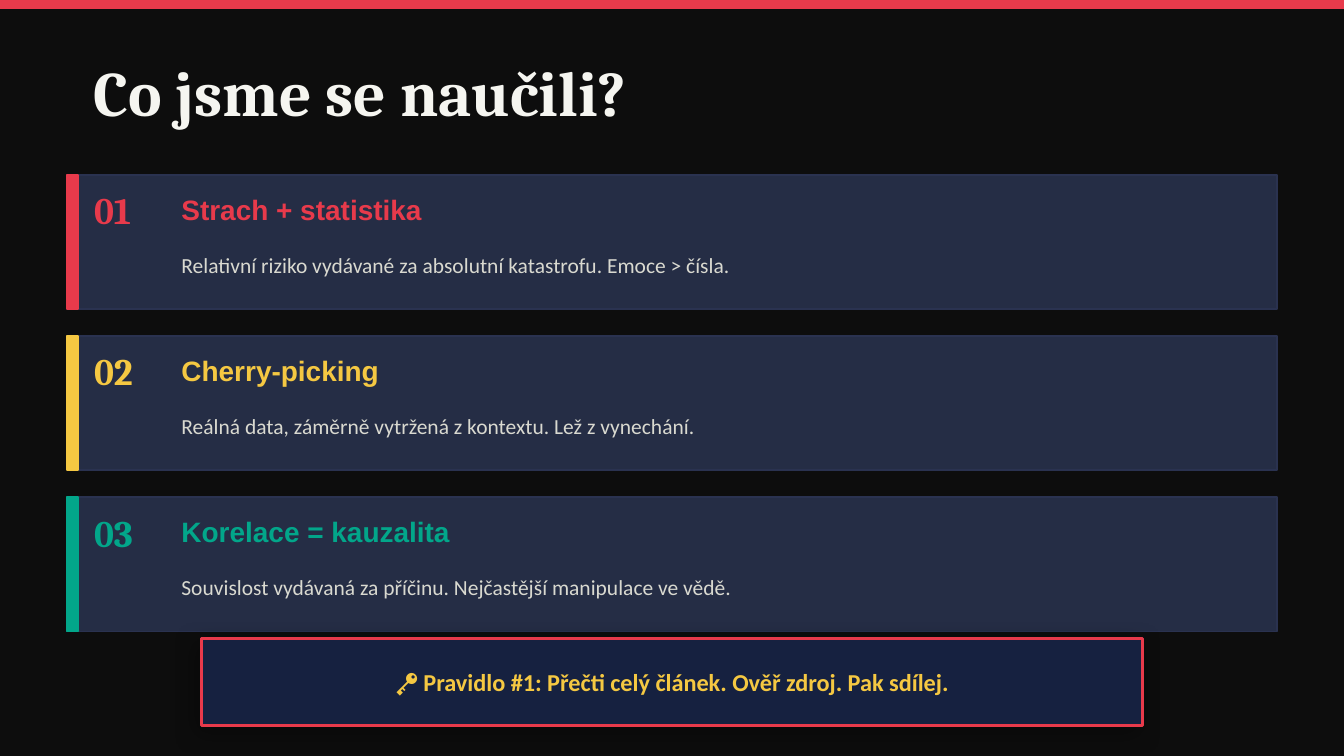
import pptx
import pptx.dml.color
import pptx.enum.shapes
import pptx.enum.text
import pptx.oxml
import pptx.oxml.ns
import pptx.util

Inches = pptx.util.Inches
Pt = pptx.util.Pt
Align = pptx.enum.text.PP_ALIGN


class Theme:
    back, card, edge, navy = "0D0D0D", "252D45", "2A3250", "162140"
    red, gold, green = "E83A4B", "F5C842", "02A68A"
    white, grey = "F5F5F0", "D9D9D0"
    serif, sans, body = "Cambria", "Arial", "Calibri"
    title, number, head, rule, note = 34, 20, 15, 13, 11.5


def add_box(left, top, width, height, fill, line, weight=1):
    box = slide.shapes.add_shape(
        pptx.enum.shapes.MSO_SHAPE.RECTANGLE,
        Inches(left), Inches(top), Inches(width), Inches(height))
    box.shadow.inherit = False
    box.fill.solid()
    box.fill.fore_color.rgb = pptx.dml.color.RGBColor.from_string(fill)
    box.line.color.rgb = pptx.dml.color.RGBColor.from_string(line)
    box.line.width = Pt(weight)
    return box


def add_text(left, top, width, height, text, size, font, color,
             bold=True, align=Align.LEFT, inset=(0, 0)):
    box = slide.shapes.add_textbox(
        Inches(left), Inches(top), Inches(width), Inches(height))
    frame = box.text_frame
    frame.word_wrap = True
    frame.vertical_anchor = pptx.enum.text.MSO_ANCHOR.MIDDLE
    frame.margin_left = frame.margin_right = Inches(inset[0])
    frame.margin_top = frame.margin_bottom = Inches(inset[1])
    para = frame.paragraphs[0]
    para.alignment = align
    run = para.add_run()
    run.text = text
    run.font.size = Pt(size)
    run.font.name = font
    run.font.bold = bold
    run.font.color.rgb = pptx.dml.color.RGBColor.from_string(color)


deck = pptx.Presentation()
deck.slide_width = Inches(10)
deck.slide_height = Inches(5.625)
slide = deck.slides.add_slide(deck.slide_layouts[6])
slide.background.fill.solid()
slide.background.fill.fore_color.rgb = pptx.dml.color.RGBColor.from_string(Theme.back)

add_box(0, 0, 10, 0.06, Theme.red, Theme.red)
add_text(0.6, 0.3, 8.8, 0.75, "Co jsme se naučili?",
         Theme.title, Theme.serif, Theme.white, inset=(0.1, 0.05))

lessons = [
    ("Strach + statistika", Theme.red,
     "Relativní riziko vydávané za absolutní katastrofu. Emoce > čísla."),
    ("Cherry-picking", Theme.gold,
     "Reálná data, záměrně vytržená z kontextu. Lež z vynechání."),
    ("Korelace = kauzalita", Theme.green,
     "Souvislost vydávaná za příčinu. Nejčastější manipulace ve vědě."),
]
for index, (head, color, note) in enumerate(lessons):
    top = 1.3 + 1.2 * index
    add_box(0.5, top, 9, 1, Theme.card, Theme.edge)
    add_box(0.5, top, 0.08, 1, color, color)
    add_text(0.7, top + 0.05, 0.55, 0.42, f"{index + 1:02}",
             Theme.number, Theme.serif, color)
    add_text(1.35, top + 0.08, 3.8, 0.35, head, Theme.head, Theme.sans, color)
    add_text(1.35, top + 0.48, 7.9, 0.38, note,
             Theme.note, Theme.body, Theme.grey, bold=False)

panel = add_box(1.5, 4.75, 7, 0.65, Theme.navy, Theme.red, 1.5)
effects = panel._element.spPr.find(pptx.oxml.ns.qn("a:effectLst"))
effects.append(pptx.oxml.parse_xml(
    f'<a:outerShdw {pptx.oxml.ns.nsdecls("a")} blurRad="{Pt(12)}" '
    f'dist="{Pt(4)}" dir="{135 * 60000}" algn="bl" rotWithShape="0">'
    '<a:srgbClr val="000000"><a:alpha val="35000"/></a:srgbClr></a:outerShdw>'))
add_text(1.5, 4.75, 7, 0.65,
         "🔑 Pravidlo #1: Přečti celý článek. Ověř zdroj. Pak sdílej.",
         Theme.rule, Theme.body, Theme.gold, align=Align.CENTER)

deck.save("out.pptx")
